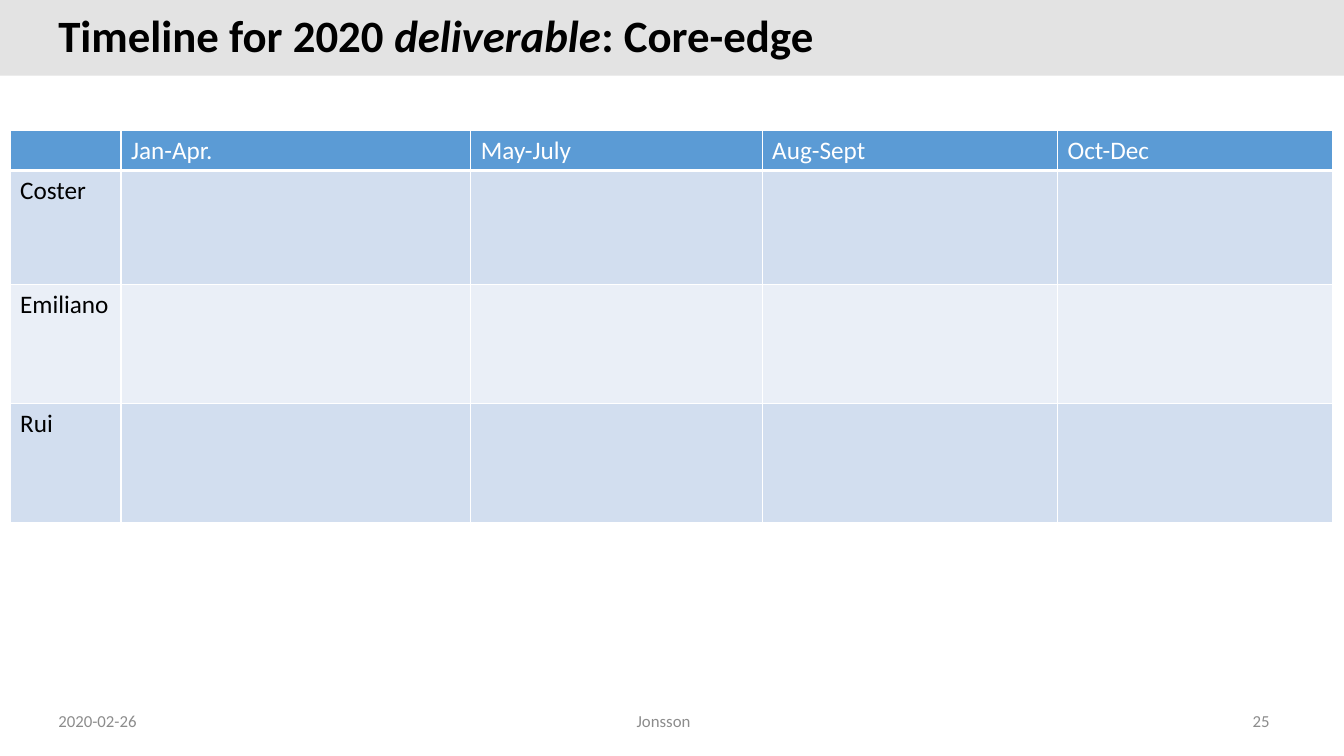
from dataclasses import dataclass

from lxml.etree import SubElement
from pptx import Presentation
from pptx.dml.color import RGBColor as Rgb
from pptx.enum.shapes import MSO_SHAPE as Shape
from pptx.enum.text import MSO_ANCHOR as Anchor, PP_ALIGN as Align
from pptx.oxml.ns import qn
from pptx.util import Inches, Pt

WIDTH, HEIGHT = Inches(13.33), Inches(7.5)


@dataclass(frozen=True)
class Theme:
    """Colours, typeface and type sizes of the slide."""
    font: str = "Calibri"
    ink: str = "000000"
    paper: str = "FFFFFF"
    band: str = "E3E3E3"
    header: str = "5B9BD5"
    stripes: tuple = ("D2DEEF", "EAEFF7")
    muted: str = "8C8C8C"
    title_size: int = 32
    table_size: int = 18
    footer_size: int = 12


THEME = Theme()
PERIODS = ["Jan-Apr.", "May-July", "Aug-Sept", "Oct-Dec"]
PEOPLE = ["Coster", "Emiliano", "Rui"]
COLUMN_SHARES = [8.25, 26.03, 21.68, 21.98, 20.48]
ROW_SHARES = [5.07, 15.07, 15.73, 15.73]
TITLE = [("Timeline for 2020 ", False), ("deliverable", True), (": Core-edge", False)]
FOOTERS = [
    ("2020-02-26", 3.6, 22.5, Align.LEFT),
    ("Jonsson", 32.5, 33.75, Align.CENTER),
    ("25", 72.7, 22.5, Align.RIGHT),
]


def across(share):
    """Turn a percentage of the slide width into a length."""
    return round(WIDTH * share / 100)


def down(share):
    """Turn a percentage of the slide height into a length."""
    return round(HEIGHT * share / 100)


def area(left, top, width, height):
    """Turn percentages of the slide into a position and size."""
    return across(left), down(top), across(width), down(height)


def apply(target, formats):
    """Set each named attribute on the target."""
    for attribute, value in formats.items():
        setattr(target, attribute, value)


def write(paragraph, words, size, colour, bold=False, italic=False):
    """Add one formatted run to a paragraph."""
    run = paragraph.add_run()
    run.text = words
    apply(run.font, {"name": THEME.font, "size": Pt(size), "bold": bold, "italic": italic})
    run.font.color.rgb = Rgb.from_string(colour)


def add_band(slide):
    """Draw the strip behind the title."""
    band = slide.shapes.add_shape(Shape.RECTANGLE, *area(0, 0, 100, 10))
    band.shadow.inherit = False
    band.fill.solid()
    band.fill.fore_color.rgb = Rgb.from_string(THEME.band)
    band.line.fill.background()


def add_line_of_text(slide, place, align, line_spacing=1.0):
    """Add a vertically centred text box and return its paragraph."""
    frame = slide.shapes.add_textbox(*place).text_frame
    apply(frame, {"word_wrap": True, "vertical_anchor": Anchor.MIDDLE})
    paragraph = frame.paragraphs[0]
    apply(paragraph, {"alignment": align, "line_spacing": line_spacing})
    return paragraph


def add_title(slide):
    """Write the title with its italic word."""
    title = add_line_of_text(slide, area(3.6, 1.73, 86.57, 6.53), Align.LEFT, 0.9)
    for words, italic in TITLE:
        write(title, words, THEME.title_size, THEME.ink, bold=True, italic=italic)


def border_cell(cell, bottom_width):
    """Rule all four sides of a table cell."""
    properties = cell._tc.get_or_add_tcPr()
    sides = {"a:lnL": 1, "a:lnR": 1, "a:lnT": 1, "a:lnB": bottom_width}
    for side, width in sides.items():
        rule = SubElement(properties, qn(side), w=str(Pt(width)))
        paint = SubElement(rule, qn("a:solidFill"))
        SubElement(paint, qn("a:srgbClr"), val=THEME.paper)


def fill_cell(cell, words, fill, ink, bottom_width):
    """Rule, shade and write one table cell."""
    border_cell(cell, bottom_width)
    cell.fill.solid()
    cell.fill.fore_color.rgb = Rgb.from_string(fill)
    paragraph = cell.text_frame.paragraphs[0]
    paragraph.font.size = Pt(THEME.table_size)
    if words:
        write(paragraph, words, THEME.table_size, ink)


def add_timeline(slide):
    """Add the table of people against periods."""
    rows = [["", *PERIODS]] + [[person] + [""] * len(PERIODS) for person in PEOPLE]
    place = area(0.75, 17.2, sum(COLUMN_SHARES), sum(ROW_SHARES))
    timeline = slide.shapes.add_table(len(rows), len(rows[0]), *place).table
    for column, share in zip(timeline.columns, COLUMN_SHARES):
        column.width = across(share)
    for row, share in zip(timeline.rows, ROW_SHARES):
        row.height = down(share)
    for index, entries in enumerate(rows):
        stripe = THEME.stripes[(index - 1) % 2]
        look = (stripe, THEME.ink, 1) if index else (THEME.header, THEME.paper, 3)
        for cell, words in zip(timeline.rows[index].cells, entries):
            fill_cell(cell, words, *look)


def add_footers(slide):
    """Write the date, author and page number."""
    for words, left, width, align in FOOTERS:
        footer = add_line_of_text(slide, area(left, 92.67, width, 5.33), align)
        write(footer, words, THEME.footer_size, THEME.muted)


def main():
    """Build and save the timeline slide."""
    deck = Presentation()
    apply(deck, {"slide_width": WIDTH, "slide_height": HEIGHT})
    slide = deck.slides.add_slide(deck.slide_layouts[6])
    for add_part in (add_band, add_title, add_timeline, add_footers):
        add_part(slide)
    deck.save("out.pptx")


if __name__ == "__main__":
    main()
